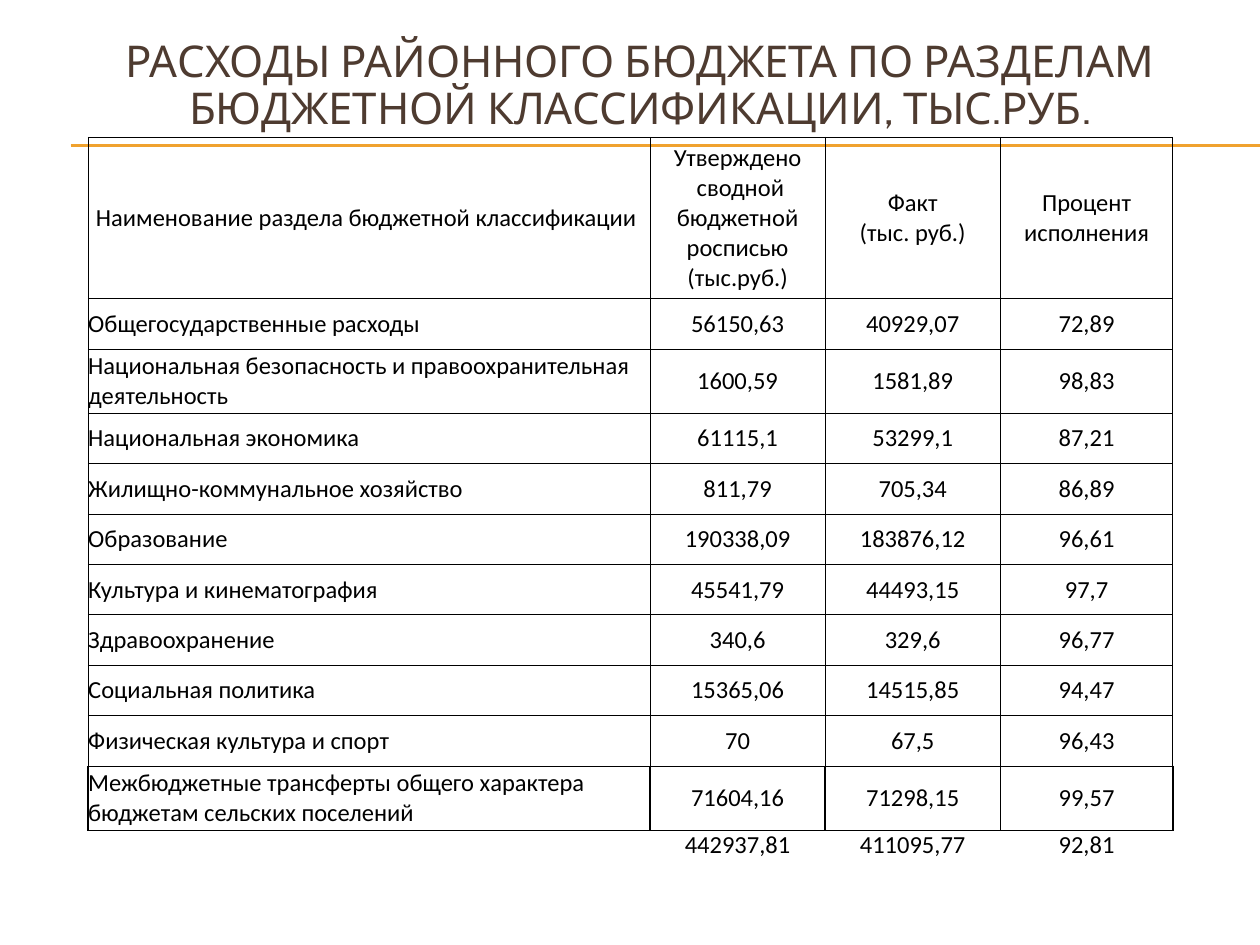
from typing import NamedTuple

from lxml.etree import SubElement
from pptx import Presentation
from pptx.dml.color import RGBColor
from pptx.enum.shapes import MSO_CONNECTOR
from pptx.enum.text import MSO_ANCHOR, PP_ALIGN
from pptx.oxml.ns import qn
from pptx.util import Inches, Pt

BLACK, BROWN, AMBER = "000000", "4E3B30", "F0A22E"
COLUMN_WIDTHS = [1.48, 1.47, 1.51, 1.39, 1.39, 1.37]
NAME_SPAN = 3
HEADER_HEIGHT, TOTAL_HEIGHT = 1.28, 0.24
ONE_LINE, TWO_LINES = 0.4, 0.51
THIN, THICK = 0.5, 1


class Expense(NamedTuple):
    name: str
    planned: str
    actual: str
    percent: str
    height: float = ONE_LINE


HEADER = Expense(
    "Наименование раздела бюджетной классификации ",
    "Утверждено\n сводной бюджетной росписью\n(тыс.руб.)",
    "Факт\n(тыс. руб.)",
    "Процент исполнения",
    HEADER_HEIGHT,
)
SECTIONS = [
    Expense("Общегосударственные расходы", "56150,63", "40929,07", "72,89"),
    Expense("Национальная безопасность и правоохранительная деятельность",
            "1600,59", "1581,89", "98,83", TWO_LINES),
    Expense("Национальная экономика", "61115,1", "53299,1", "87,21"),
    Expense("Жилищно-коммунальное хозяйство", "811,79", "705,34", "86,89"),
    Expense("Образование", "190338,09", "183876,12", "96,61"),
    Expense("Культура и кинематография", "45541,79", "44493,15", "97,7"),
    Expense("Здравоохранение", "340,6", "329,6", "96,77"),
    Expense("Социальная политика", "15365,06", "14515,85", "94,47"),
    Expense("Физическая культура и спорт", "70", "67,5", "96,43"),
    Expense("Межбюджетные трансферты общего характера бюджетам сельских поселений",
            "71604,16", "71298,15", "99,57", TWO_LINES),
]
TOTAL = Expense("", "442937,81", "411095,77", "92,81", TOTAL_HEIGHT)


def color(value: str) -> RGBColor:
    return RGBColor.from_string(value)


def set_attributes(target, values: dict) -> None:
    for name, value in values.items():
        setattr(target, name, value)


def write(frame, text: str, alignment, font: str, size: float, ink: str) -> None:
    """Write each line of the text as a paragraph."""
    for index, line in enumerate(text.split("\n")):
        para = frame.paragraphs[0] if index == 0 else frame.add_paragraph()
        para.alignment = alignment
        if not line:
            SubElement(para._p, qn("a:endParaRPr"), sz=str(size * 100))
            continue
        span = para.add_run()
        span.text = line
        set_attributes(span.font, {"name": font, "size": Pt(size)})
        span.font.color.rgb = color(ink)


def add_rule(page, top: float) -> None:
    rule = page.shapes.add_connector(
        MSO_CONNECTOR.STRAIGHT, Inches(0.56), Inches(top), Inches(10), Inches(top))
    rule.line.color.rgb = color(AMBER)
    rule.line.width = Pt(0.75)
    SubElement(rule._element.spPr, qn("a:effectLst"))


def set_borders(cell, widths: dict) -> None:
    """Draw the four sides; a width of zero hides a side."""
    properties = cell._tc.get_or_add_tcPr()
    for side in "LRTB":
        width = widths[side]
        border = SubElement(properties, qn(f"a:ln{side}"), w=str(Pt(width)))
        if width:
            fill = SubElement(border, qn("a:solidFill"))
            SubElement(fill, qn("a:srgbClr"), val=BLACK)
        else:
            SubElement(border, qn("a:noFill"))


def fill_row(table, index: int, expense: Expense, widths: dict) -> None:
    table.rows[index].height = Inches(expense.height)
    texts = [expense.name] + [""] * (NAME_SPAN - 1) + list(expense[1:4])
    for column, text in enumerate(texts):
        cell = table.cell(index, column)
        set_attributes(cell, {
            "margin_left": 0, "margin_right": 0, "margin_top": 0,
            "margin_bottom": 0, "vertical_anchor": MSO_ANCHOR.MIDDLE})
        set_borders(cell, widths)
        cell.fill.background()
        is_name = column < NAME_SPAN and expense is not HEADER
        alignment = PP_ALIGN.LEFT if is_name else PP_ALIGN.CENTER
        write(cell.text_frame, text, alignment, "Calibri", 14, BLACK)
    if expense.name:
        table.cell(index, 0).merge(table.cell(index, NAME_SPAN - 1))


def add_budget_table(page) -> None:
    expenses = [HEADER, *SECTIONS, TOTAL]
    height = sum(expense.height for expense in expenses)
    table = page.shapes.add_table(
        len(expenses), len(COLUMN_WIDTHS), Inches(0.7), Inches(1.09),
        Inches(sum(COLUMN_WIDTHS)), Inches(height)).table
    set_attributes(table, {"first_row": False, "horz_banding": False})
    for column, width in zip(table.columns, COLUMN_WIDTHS):
        column.width = Inches(width)

    grid = dict.fromkeys("LRTB", THIN)
    last_section = {"L": THICK, "R": THICK, "T": THIN, "B": THICK}
    total = {"L": 0, "R": 0, "T": THICK, "B": 0}
    borders = [grid] * len(SECTIONS) + [last_section, total]
    for index, (expense, widths) in enumerate(zip(expenses, borders)):
        fill_row(table, index, expense, widths)


def add_title(page) -> None:
    box = page.shapes.add_textbox(Inches(0.33), Inches(0.23), Inches(9.5), Inches(0.92))
    frame = box.text_frame
    set_attributes(frame, {"word_wrap": True, "vertical_anchor": MSO_ANCHOR.MIDDLE})
    write(frame, "РАСХОДЫ РАЙОННОГО БЮДЖЕТА ПО РАЗДЕЛАМ БЮДЖЕТНОЙ КЛАССИФИКАЦИИ, ТЫС.РУБ.",
          PP_ALIGN.CENTER, "Cabin", 25, BROWN)
    frame.paragraphs[0].line_spacing = 0.9


def main() -> None:
    deck = Presentation()
    set_attributes(deck, {"slide_width": Inches(10), "slide_height": Inches(7.5)})
    page = deck.slides.add_slide(deck.slide_layouts[6])

    # Double rule under the title
    for top in (1.15, 1.16):
        add_rule(page, top)

    # Title and table
    add_title(page)
    add_budget_table(page)
    deck.save("out.pptx")


if __name__ == "__main__":
    main()
